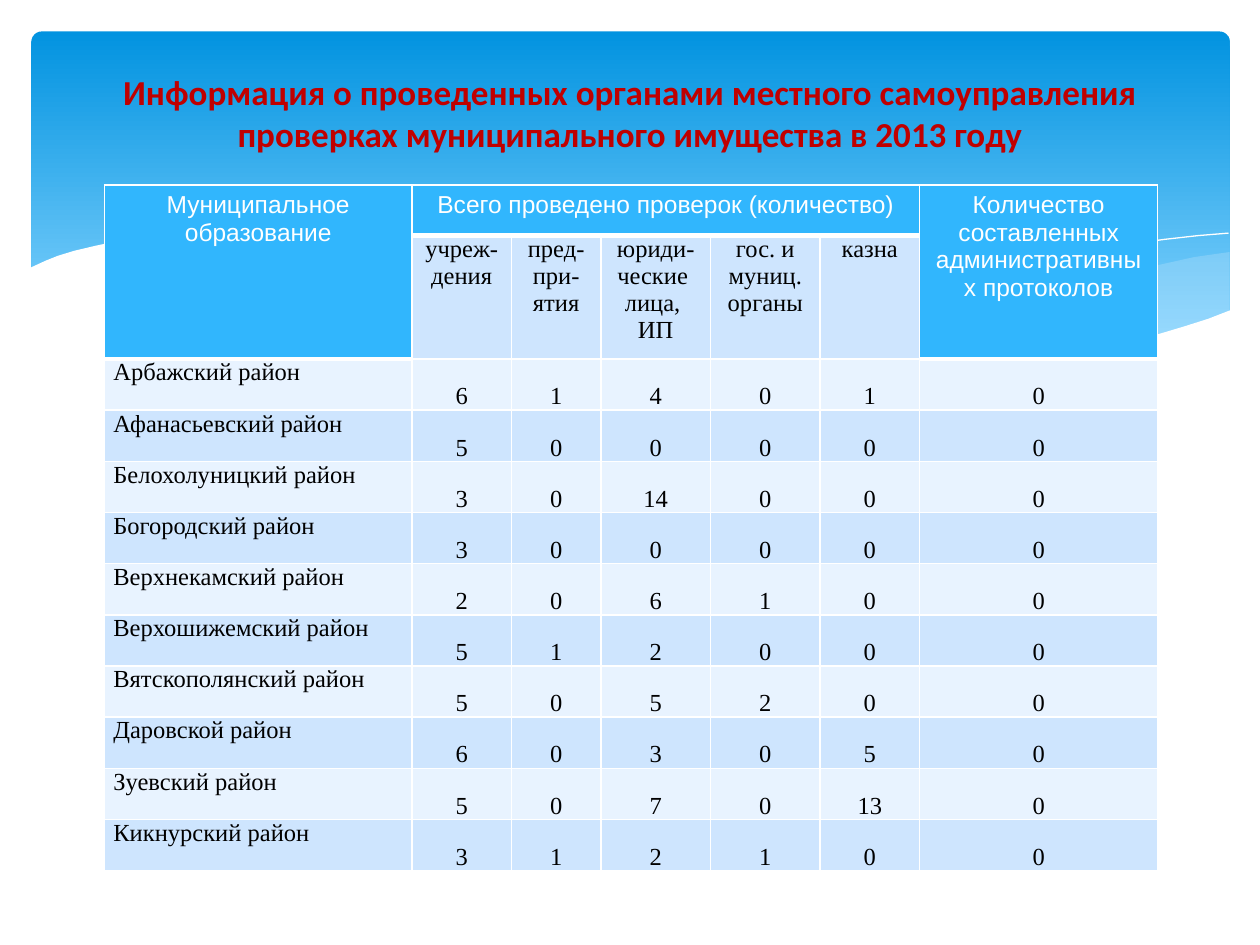
from dataclasses import dataclass
from typing import Optional

from lxml import etree
from pptx import Presentation
from pptx.dml.color import RGBColor
from pptx.enum import shapes, text
from pptx.oxml import ns
from pptx.util import Inches, Pt

WHITE = RGBColor(0xFF, 0xFF, 0xFF)
BLACK = RGBColor(0x00, 0x00, 0x00)
SKY_TOP = RGBColor(0x02, 0x93, 0xE0)
SKY_BOTTOM = RGBColor(0x83, 0xD3, 0xFE)
MIST = RGBColor(0xC6, 0xE7, 0xFC)
TITLE_RED = RGBColor(0xC0, 0x00, 0x00)
HEADER_BLUE = RGBColor(0x31, 0xB6, 0xFD)
BAND_DARK = RGBColor(0xCE, 0xE5, 0xFE)
BAND_LIGHT = RGBColor(0xE8, 0xF3, 0xFF)
HUNDREDTH = Inches(0.01)


@dataclass(frozen=True)
class Wave:
    points: list[tuple[int, int]]
    fill: Optional[RGBColor] = None
    opacity: int = 100


@dataclass(frozen=True)
class CellStyle:
    fill: RGBColor
    color: RGBColor = BLACK
    font: str = "Times New Roman"
    align: text.PP_ALIGN = text.PP_ALIGN.CENTER
    anchor: text.MSO_ANCHOR = text.MSO_ANCHOR.TOP
    margin_x: float = 0.07
    margin_y: float = 0


WAVES = [
    Wave([(976, 200), (948, 204), (921, 210), (891, 216), (861, 223), (805, 237),
          (753, 248), (706, 257), (661, 265), (691, 269), (719, 272), (745, 275),
          (769, 277), (803, 278), (835, 277), (863, 275), (889, 272), (913, 267),
          (935, 262), (949, 257), (963, 252), (976, 247)], MIST, 29),
    Wave([(893, 273), (866, 269), (837, 265), (807, 260), (775, 254), (741, 247),
          (706, 240), (668, 231), (629, 222), (598, 214), (569, 208), (541, 203),
          (514, 198), (489, 194), (465, 191), (442, 189), (420, 187), (380, 185),
          (344, 186), (313, 188), (286, 191), (323, 196), (362, 203), (404, 211),
          (449, 222), (491, 232), (530, 240), (566, 248), (601, 255), (634, 261),
          (665, 266), (695, 270), (722, 274), (748, 276), (773, 277), (796, 278),
          (838, 278), (867, 276)], MIST, 40),
    Wave([(309, 195), (328, 192), (353, 189), (387, 187), (433, 187), (469, 189),
          (510, 192), (556, 197), (608, 204), (665, 213), (727, 226), (795, 241),
          (869, 261), (907, 272)]),
    Wave([(613, 257), (653, 246), (695, 235), (748, 223), (806, 210), (866, 199),
          (895, 194), (924, 190), (951, 187), (975, 185)]),
    Wave([(977, 246), (959, 253), (940, 259), (920, 265), (899, 269), (875, 273),
          (850, 275), (823, 277), (793, 276), (761, 275), (726, 272), (688, 268),
          (648, 262), (603, 254), (555, 245), (503, 233), (447, 220), (391, 207),
          (340, 197), (292, 190), (250, 186), (211, 184), (177, 184), (146, 185),
          (119, 187), (95, 191), (76, 195), (59, 199), (46, 203), (36, 207),
          (23, 213), (23, 329), (977, 329)], WHITE),
]

COLUMN_WIDTHS = [2.44, 0.79, 0.71, 0.87, 0.87, 0.79, 1.89]
HEADER_HEIGHTS = [0.4, 0.98]
DISTRICTS_HEIGHT = 4.06
HEADINGS = {
    0: "Муниципальное образование",
    1: "Всего проведено проверок (количество)",
    6: "Количество составленных административных протоколов",
}
CHECKED = ["учреж-дения", "пред-\nпри-\nятия", "юриди-ческие \nлица, \nИП",
           "гос. и муниц. органы", "казна"]
DISTRICTS = [
    ("Арбажский район", 6, 1, 4, 0, 1, 0),
    ("Афанасьевский район", 5, 0, 0, 0, 0, 0),
    ("Белохолуницкий район", 3, 0, 14, 0, 0, 0),
    ("Богородский район", 3, 0, 0, 0, 0, 0),
    ("Верхнекамский район", 2, 0, 6, 1, 0, 0),
    ("Верхошижемский район", 5, 1, 2, 0, 0, 0),
    ("Вятскополянский район", 5, 0, 5, 2, 0, 0),
    ("Даровской район", 6, 0, 3, 0, 5, 0),
    ("Зуевский район", 5, 0, 7, 0, 13, 0),
    ("Кикнурский район", 3, 1, 2, 1, 0, 0),
]


def draw_sky(slide) -> None:
    sky = slide.shapes.add_shape(shapes.MSO_SHAPE.ROUNDED_RECTANGLE, Inches(0.25),
                                 Inches(0.25), Inches(9.51), Inches(2.7))
    sky.adjustments[0] = 0.03
    sky.shadow.inherit = False
    sky.line.fill.background()
    sky.fill.gradient()
    sky.fill.gradient_angle = 270
    stops = sky.fill.gradient_stops
    for stop, color, position in zip(stops, (SKY_TOP, SKY_BOTTOM), (0, 0.9)):
        stop.color.rgb = color
        stop.position = position


def draw_wave(group, wave: Wave) -> None:
    builder = group.shapes.build_freeform(*wave.points[0], scale=HUNDREDTH)
    builder.add_line_segments(wave.points[1:], close=wave.fill is not None)
    outline = builder.convert_to_shape()
    outline.shadow.inherit = False
    if wave.fill is None:
        outline.fill.background()
        outline.line.color.rgb = WHITE
        outline.line.width = Pt(0)
        return
    outline.line.fill.background()
    outline.fill.solid()
    outline.fill.fore_color.rgb = wave.fill
    if wave.opacity < 100:
        color = outline.fill._xPr.find(ns.qn("a:solidFill"))[0]
        etree.SubElement(color, ns.qn("a:alpha"), val=str(wave.opacity * 1000))


def draw_border(cell, side: str, width: float) -> None:
    line = etree.SubElement(cell._tc.get_or_add_tcPr(), ns.qn(f"a:ln{side}"),
                            w=str(Pt(width)))
    fill = etree.SubElement(line, ns.qn("a:solidFill"))
    etree.SubElement(fill, ns.qn("a:srgbClr"), val=str(WHITE))


def fill_cell(cell, content: str, style: CellStyle) -> None:
    cell.text_frame.text = content
    cell.vertical_anchor = style.anchor
    cell.margin_left = cell.margin_right = Inches(style.margin_x)
    cell.margin_top = cell.margin_bottom = Inches(style.margin_y)
    cell.fill.solid()
    cell.fill.fore_color.rgb = style.fill
    for paragraph in cell.text_frame.paragraphs:
        paragraph.alignment = style.align
        for run in paragraph.runs:
            run.font.size = Pt(14)
            run.font.name = style.font
            run.font.bold = False
            run.font.color.rgb = style.color


def draw_checks(slide) -> None:
    heights = HEADER_HEIGHTS + [DISTRICTS_HEIGHT / len(DISTRICTS)] * len(DISTRICTS)
    frame = slide.shapes.add_table(len(heights), len(COLUMN_WIDTHS), Inches(0.83),
                                   Inches(1.47), Inches(sum(COLUMN_WIDTHS)),
                                   Inches(sum(heights)))
    checks = frame.table
    checks.first_row = checks.horz_banding = False
    for column, width in zip(checks.columns, COLUMN_WIDTHS):
        column.width = Inches(width)
    for row, height in zip(checks.rows, heights):
        row.height = Inches(height)

    last = len(COLUMN_WIDTHS) - 1
    for r in range(len(heights)):
        for c in range(last + 1):
            cell = checks.cell(r, c)
            draw_border(cell, "L", 1)
            draw_border(cell, "R", 1)
            if r == 0:
                draw_border(cell, "T", 1)
            under_heading = r == 0 or (r == 1 and c in (0, last))
            draw_border(cell, "B", 3 if under_heading else 1)

    heading = CellStyle(HEADER_BLUE, WHITE, "Arial", margin_x=0.1, margin_y=0.05)
    for c, content in HEADINGS.items():
        fill_cell(checks.cell(0, c), content, heading)
    checks.cell(0, 0).merge(checks.cell(1, 0))
    checks.cell(0, 1).merge(checks.cell(0, last - 1))
    checks.cell(0, last).merge(checks.cell(1, last))
    for c, content in enumerate(CHECKED, start=1):
        fill_cell(checks.cell(1, c), content, CellStyle(BAND_DARK))
    for r, (name, *counts) in enumerate(DISTRICTS, start=2):
        band = BAND_DARK if r % 2 else BAND_LIGHT
        fill_cell(checks.cell(r, 0), name, CellStyle(band, align=text.PP_ALIGN.LEFT))
        for c, count in enumerate(counts, start=1):
            fill_cell(checks.cell(r, c), str(count),
                      CellStyle(band, anchor=text.MSO_ANCHOR.BOTTOM))


def write_title(slide) -> None:
    title = slide.shapes.title
    title.left, title.top = Inches(0.5), Inches(0.37)
    title.width, title.height = Inches(9), Inches(1.37)
    frame = title.text_frame
    frame.text = ("Информация о проведенных органами местного самоуправления "
                  "проверках муниципального имущества в 2013 году")
    frame.auto_size = text.MSO_AUTO_SIZE.NONE
    frame.vertical_anchor = text.MSO_ANCHOR.MIDDLE
    frame.margin_bottom = Inches(0.38)
    paragraph = frame.paragraphs[0]
    paragraph.alignment = text.PP_ALIGN.CENTER
    font = paragraph.runs[0].font
    font.name, font.size, font.bold = "Calibri", Pt(20), True
    font.color.rgb = TITLE_RED
    slide.shapes._spTree.append(title._element)


def main() -> None:
    deck = Presentation()
    deck.slide_width, deck.slide_height = Inches(10), Inches(7.5)
    slide = deck.slides.add_slide(deck.slide_layouts[5])
    draw_sky(slide)
    waves = slide.shapes.add_group_shape()
    for wave in WAVES:
        draw_wave(waves, wave)
    write_title(slide)
    draw_checks(slide)
    deck.save("out.pptx")


if __name__ == "__main__":
    main()
